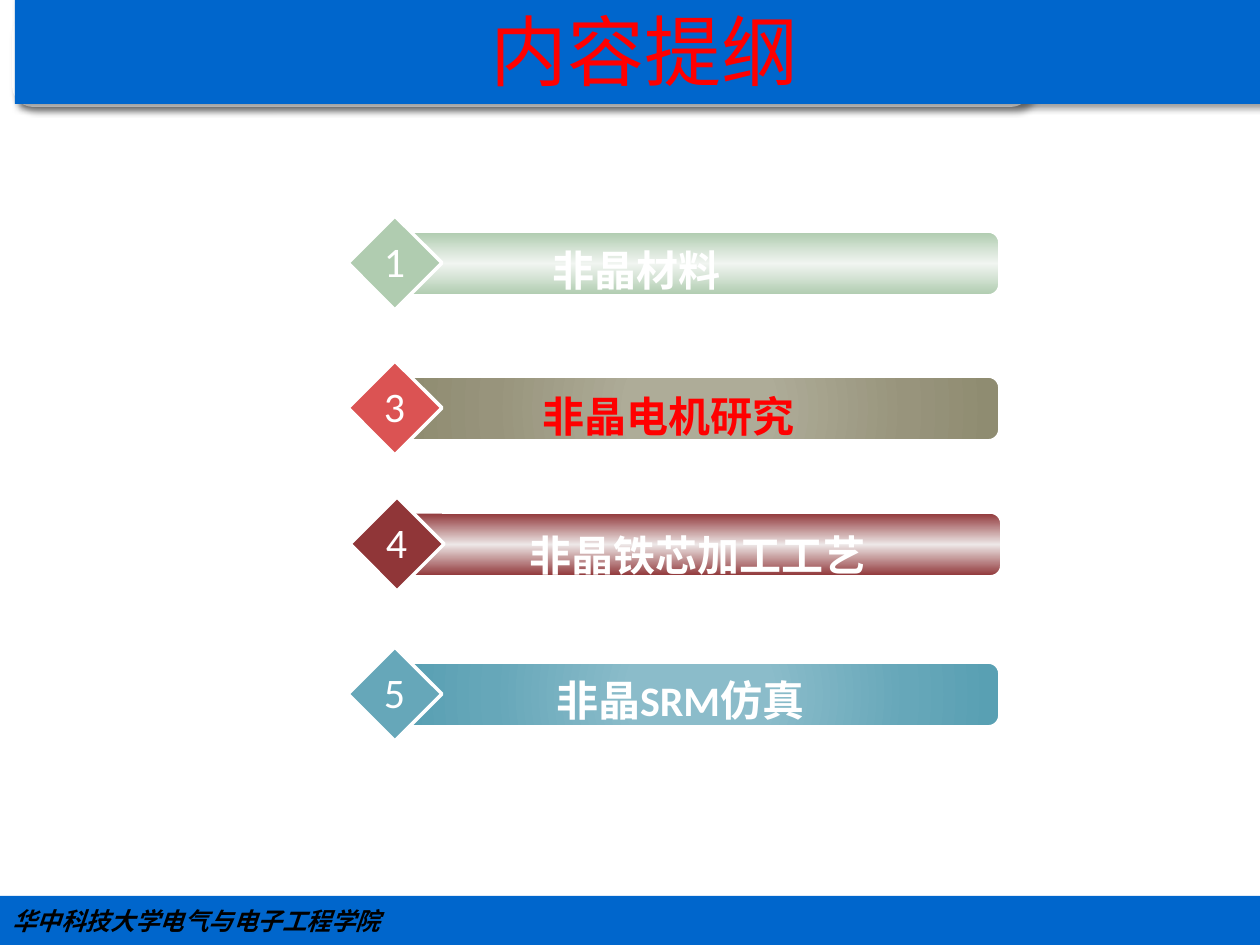
"""Build the outline slide: title bar, four numbered topics and a footer."""
from lxml.etree import SubElement
from pptx import Presentation
from pptx.dml.color import RGBColor
from pptx.enum.shapes import MSO_SHAPE as Kind
from pptx.enum.text import MSO_ANCHOR as Anchor, MSO_AUTO_SIZE as Auto, PP_ALIGN as Align
from pptx.oxml.ns import qn
from pptx.util import Pt

TITLE = "内容提纲"
FOOTER = "华中科技大学电气与电子工程学院"


def sheen(edge, mid):
    return [(0, edge), (50, mid), (100, edge)], False


def glow(core, ring, rim):
    return [(0, core), (23, core), (69, ring), (97, rim)], True


TOPICS = [
    dict(num="1", text="非晶材料", ink="FFFFFF", gem="B0CCB0", bar=(401, 232),
         box=(382, 238), pad=36, fill=sheen("B0CCB0", "F1F5F1")),
    dict(num="3", text="非晶电机研究", ink="FF0000", gem="DB5353", bar=(401, 377),
         box=(432, 384), pad=0, fill=glow("AEAC98", "98947C", "8F8C71")),
    dict(num="4", text="非晶铁芯加工工艺", ink="FFFFFF", gem="903638", bar=(403, 513),
         box=(432, 523), pad=58, fill=sheen("903638", "EDE7E7")),
    dict(num="5", text="非晶SRM仿真", ink="FFFFFF", gem="66A7B9", bar=(401, 663),
         box=(382, 668), pad=124, fill=glow("8BBCCA", "66A7B9", "59A0B3")),
]


class Theme:
    blue, red, white, black = "0066CC", "FF0000", "FFFFFF", "000000"
    band = [(0, "8488C4"), (53, "D4DEFF"), (83, "D4DEFF"), (100, "96AB94")], False
    latin, han = "Calibri", "Noto Sans CJK SC"
    title, item, foot = 44, 24, 14


def px(n):
    return round(n * 914400 / 126)


def rgb(code):
    return RGBColor.from_string(code)


def blend(shape, stops, radial):
    shape.fill.gradient()
    grad = shape._element.spPr.find(qn("a:gradFill"))
    grad.clear()
    stop_list = SubElement(grad, qn("a:gsLst"))
    for pos, code in stops:
        stop = SubElement(stop_list, qn("a:gs"), pos=str(pos * 1000))
        SubElement(stop, qn("a:srgbClr"), val=code)
    if radial:
        ring = SubElement(grad, qn("a:path"), path="circle")
        SubElement(ring, qn("a:fillToRect"), l="50000", t="50000", r="50000", b="50000")
    else:
        SubElement(grad, qn("a:lin"), ang="5400000", scaled="0")


def shade(shape):
    effects = shape._element.spPr.find(qn("a:effectLst"))
    drop = SubElement(effects, qn("a:outerShdw"), blurRad=str(Pt(4)), dist=str(Pt(3)),
                      dir="2700000", algn="tl", rotWithShape="0")
    tint = SubElement(drop, qn("a:srgbClr"), val=Theme.black)
    SubElement(tint, qn("a:alpha"), val="40000")


def draw(slide, kind, area, fill, line=0):
    shape = slide.shapes.add_shape(kind, *map(px, area))
    shape.shadow.inherit = False
    if isinstance(fill, str):
        shape.fill.solid()
        shape.fill.fore_color.rgb = rgb(fill)
    else:
        blend(shape, *fill)
    if line:
        shape.line.color.rgb = rgb(Theme.white)
        shape.line.width = Pt(line)
    else:
        shape.line.fill.background()
    return shape


def write(shape, text, size, ink, face, align=Align.CENTER, bold=False, slant=False):
    para = shape.text_frame.paragraphs[0]
    para.text = text
    para.alignment = align
    font = para.font
    font.size, font.bold, font.italic = Pt(size), bold, slant
    font.name = face
    font.color.rgb = rgb(ink)
    SubElement(para._p.pPr.find(qn("a:defRPr")), qn("a:ea"), typeface=Theme.han)


def label(slide, area, text, ink, wrap=True, pad=0, bold=False):
    box = slide.shapes.add_textbox(*map(px, area))
    frame = box.text_frame
    frame.word_wrap = wrap
    frame.auto_size = Auto.SHAPE_TO_FIT_TEXT
    frame.margin_left += px(pad)
    write(box, text, Theme.item, ink, Theme.latin, bold=bold)


def topic(slide, item):
    left, top = item["bar"]
    bar = draw(slide, Kind.ROUNDED_RECTANGLE, (left, top, 598, 63), item["fill"], 1)
    bar.adjustments[0] = 0.17
    draw(slide, Kind.DIAMOND, (left - 53, top - 16, 94, 94), item["gem"], 2)
    label(slide, (*item["box"], 472, 63), item["text"], item["ink"], pad=item["pad"], bold=True)
    label(slide, (left - 31, top - 3, 49, 63), item["num"], Theme.white, wrap=False)


def main():
    deck = Presentation()
    deck.slide_width, deck.slide_height = px(1260), px(945)
    slide = deck.slides.add_slide(deck.slide_layouts[6])
    shade(draw(slide, Kind.ROUNDED_RECTANGLE, (20, 20, 1004, 79), Theme.band, 9))
    head = draw(slide, Kind.RECTANGLE, (15, -4, 1260, 108), Theme.blue)
    shade(head)
    write(head, TITLE, Theme.title, Theme.red, Theme.han)
    foot = draw(slide, Kind.RECTANGLE, (0, 896, 1260, 49), Theme.blue)
    write(foot, FOOTER, Theme.foot, Theme.black, Theme.han, Align.LEFT, True, True)
    for bar in (head, foot):
        bar.text_frame.vertical_anchor = Anchor.MIDDLE
    for item in TOPICS:
        topic(slide, item)
    deck.save("out.pptx")


if __name__ == "__main__":
    main()
